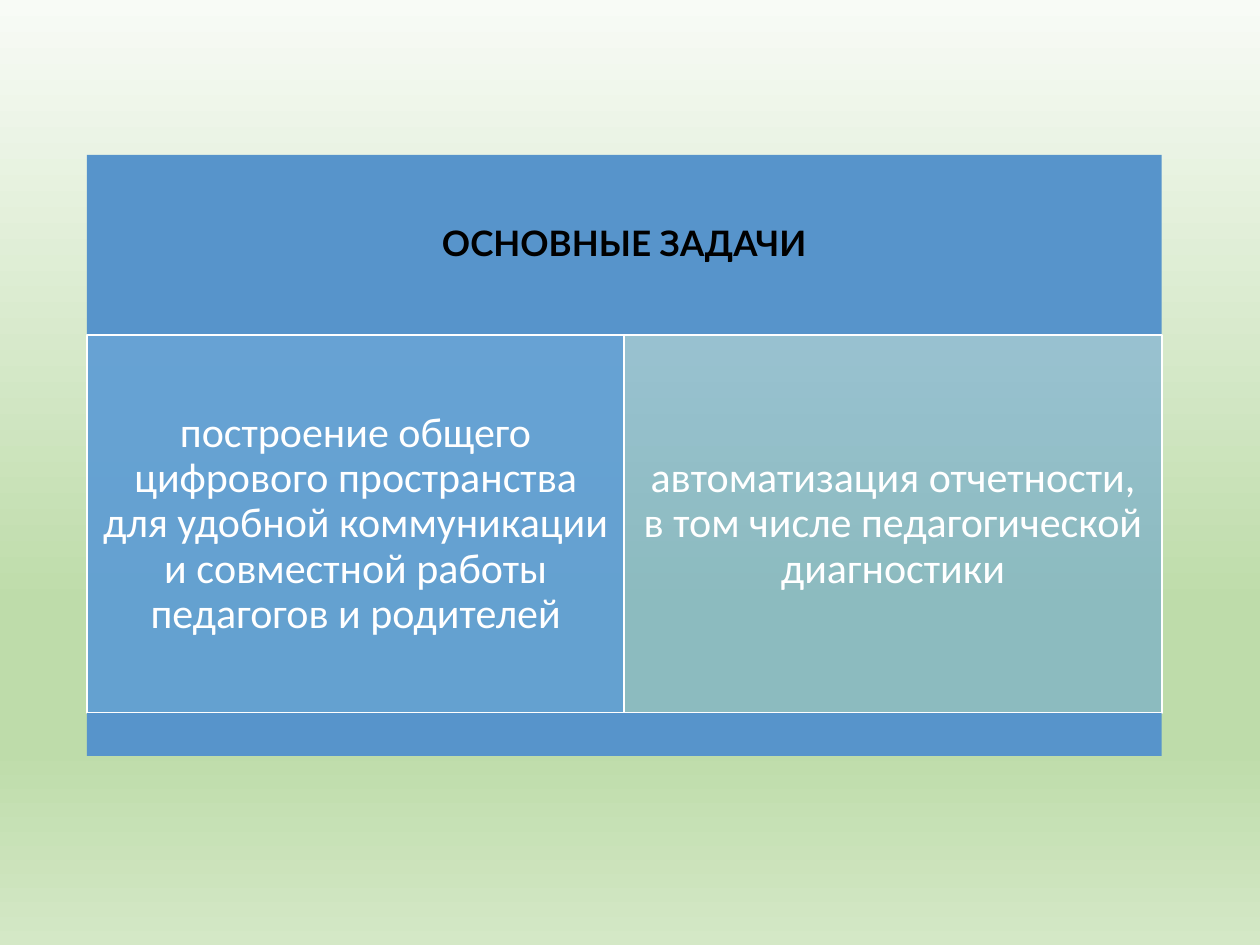
import copy

import pptx
import pptx.dml.color
import pptx.enum.shapes
import pptx.enum.text
import pptx.oxml
import pptx.oxml.ns
import pptx.util

Inches = pptx.util.Inches
HEADING = "ОСНОВНЫЕ ЗАДАЧИ"
TASKS = [
    ("построение общего цифрового пространства для удобной коммуникации "
     "и совместной работы педагогов и родителей", 90),
    ("автоматизация отчетности, в том числе педагогической диагностики", 50),
]
BACKGROUND_STOPS = [(0, "F8FBF6"), (64, "BEDCAA"), (79, "BEDCAA"), (100, "D4E8C6")]
BAND_COLOR = "5794CB"
TASK_COLOR = "5B9BD5"


def rgb(color):
    """Return the colour for a hex string."""
    return pptx.dml.color.RGBColor.from_string(color)


def paint_background(slide):
    """Fill the slide with the vertical green gradient."""
    fill = slide.background.fill
    fill.gradient()
    fill.gradient_angle = 270
    stop_list = slide.element.xpath(".//p:bgPr//a:gsLst")[0]
    for _ in range(len(BACKGROUND_STOPS) - len(stop_list)):
        stop_list.append(copy.deepcopy(stop_list[0]))
    for stop, (percent, color) in zip(fill.gradient_stops, BACKGROUND_STOPS):
        stop.position = percent / 100
        stop.color.rgb = rgb(color)


def add_block(shapes, box, color, opacity=100, outline=None):
    """Add a rectangle in the box, given as left, top, width, height."""
    block = shapes.add_shape(
        pptx.enum.shapes.MSO_SHAPE.RECTANGLE, *[Inches(length) for length in box])
    block.shadow.inherit = False
    block.fill.solid()
    block.fill.fore_color.rgb = rgb(color)
    if opacity < 100:
        color_element = block.element.spPr.xpath("./a:solidFill/a:srgbClr")[0]
        alpha = pptx.oxml.parse_xml(
            f'<a:alpha {pptx.oxml.ns.nsdecls("a")} val="{opacity * 1000}"/>')
        color_element.append(alpha)
    if outline:
        block.line.color.rgb = rgb(outline)
        block.line.width = pptx.util.Pt(1)
    else:
        block.line.fill.background()
    return block


def write_text(block, text, *, size, font, color, bold=False, inset=0.1):
    """Write centred text in the block."""
    frame = block.text_frame
    frame.word_wrap = True
    frame.vertical_anchor = pptx.enum.text.MSO_ANCHOR.MIDDLE
    frame.margin_left = frame.margin_right = Inches(inset)
    frame.margin_top = frame.margin_bottom = Inches(inset)
    paragraph = frame.paragraphs[0]
    paragraph.alignment = pptx.enum.text.PP_ALIGN.CENTER
    paragraph.line_spacing = 0.9
    run = paragraph.add_run()
    run.text = text
    run.font.size = pptx.util.Pt(size)
    run.font.name = font
    run.font.bold = bold
    run.font.color.rgb = rgb(color)


def add_heading(shapes, box):
    """Place the heading band."""
    write_text(add_block(shapes, box, BAND_COLOR), HEADING,
               size=20, font="Lato", color="000000", bold=True, inset=0.08)


def add_tasks(shapes, box):
    """Place the tasks side by side in equal columns."""
    left, top, width, height = box
    column = width / len(TASKS)
    for index, (task, opacity) in enumerate(TASKS):
        panel = add_block(shapes, (left + index * column, top, column, height),
                          TASK_COLOR, opacity, outline="FFFFFF")
        write_text(panel, task, size=24, font="Calibri", color="FFFFFF")


def add_task_table(slide, box, heading_height=1.43, task_height=3):
    """Stack heading, tasks and closing band in the box."""
    left, top, width, height = box
    shapes = slide.shapes.add_group_shape().shapes
    task_top = top + heading_height
    base_top = task_top + task_height
    add_heading(shapes, (left, top, width, heading_height))
    add_tasks(shapes, (left, task_top, width, task_height))
    add_block(shapes, (left, base_top, width, top + height - base_top), BAND_COLOR)


def main():
    """Build and save the slide."""
    presentation = pptx.Presentation()
    presentation.slide_width = Inches(10)
    presentation.slide_height = Inches(7.5)
    slide = presentation.slides.add_slide(presentation.slide_layouts[6])
    paint_background(slide)
    add_task_table(slide, (0.69, 1.23, 8.53, 4.77))
    presentation.save("out.pptx")


if __name__ == "__main__":
    main()
